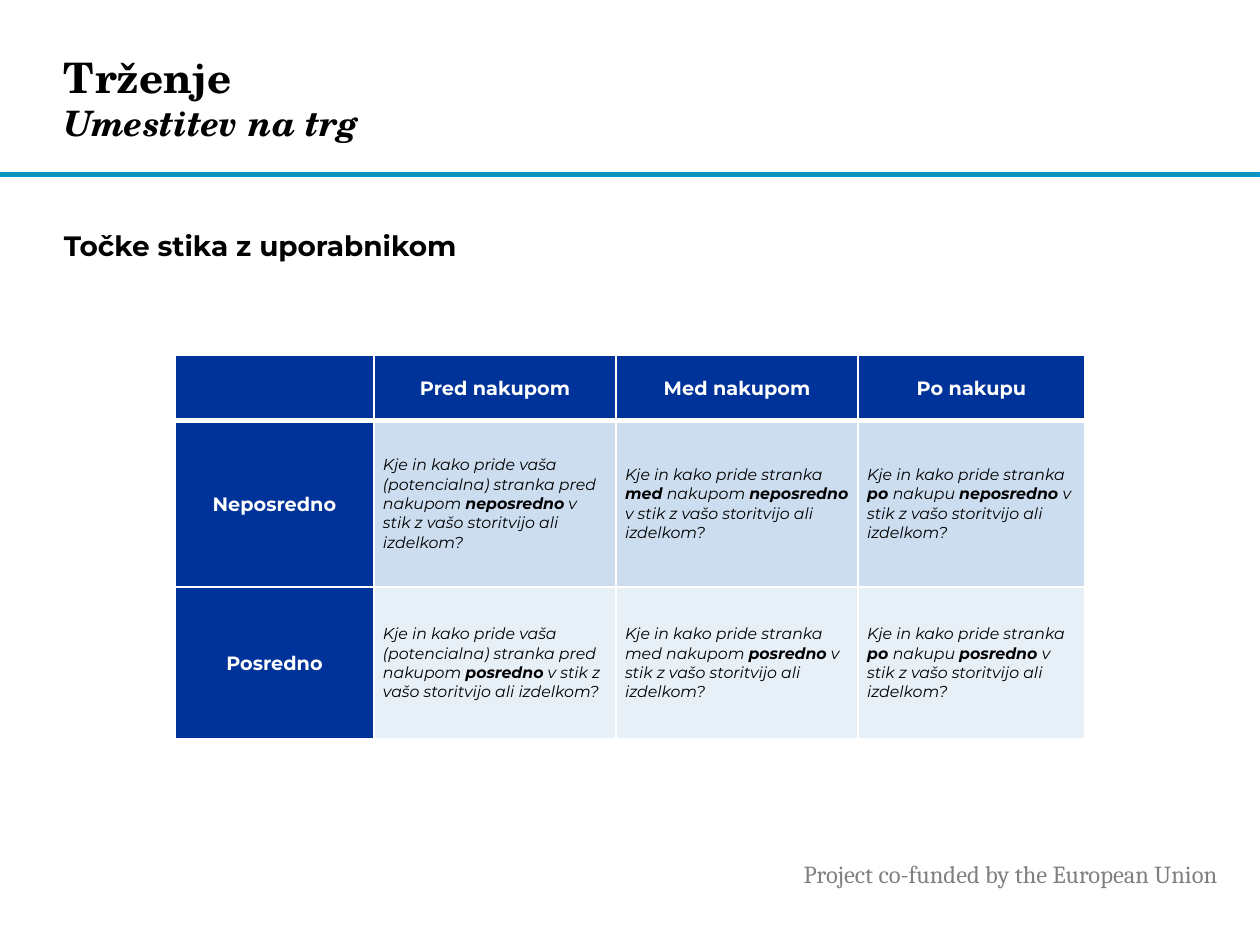
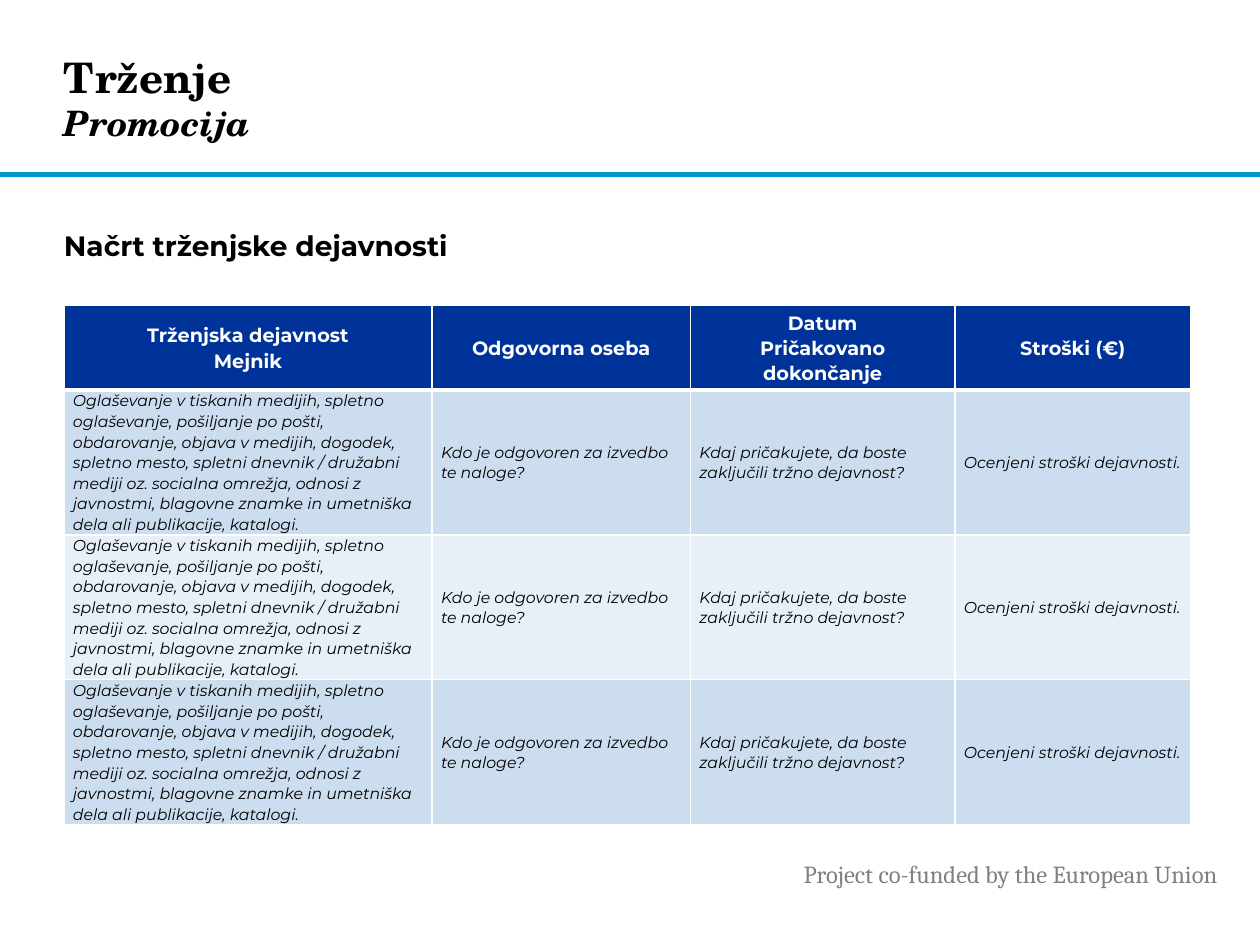
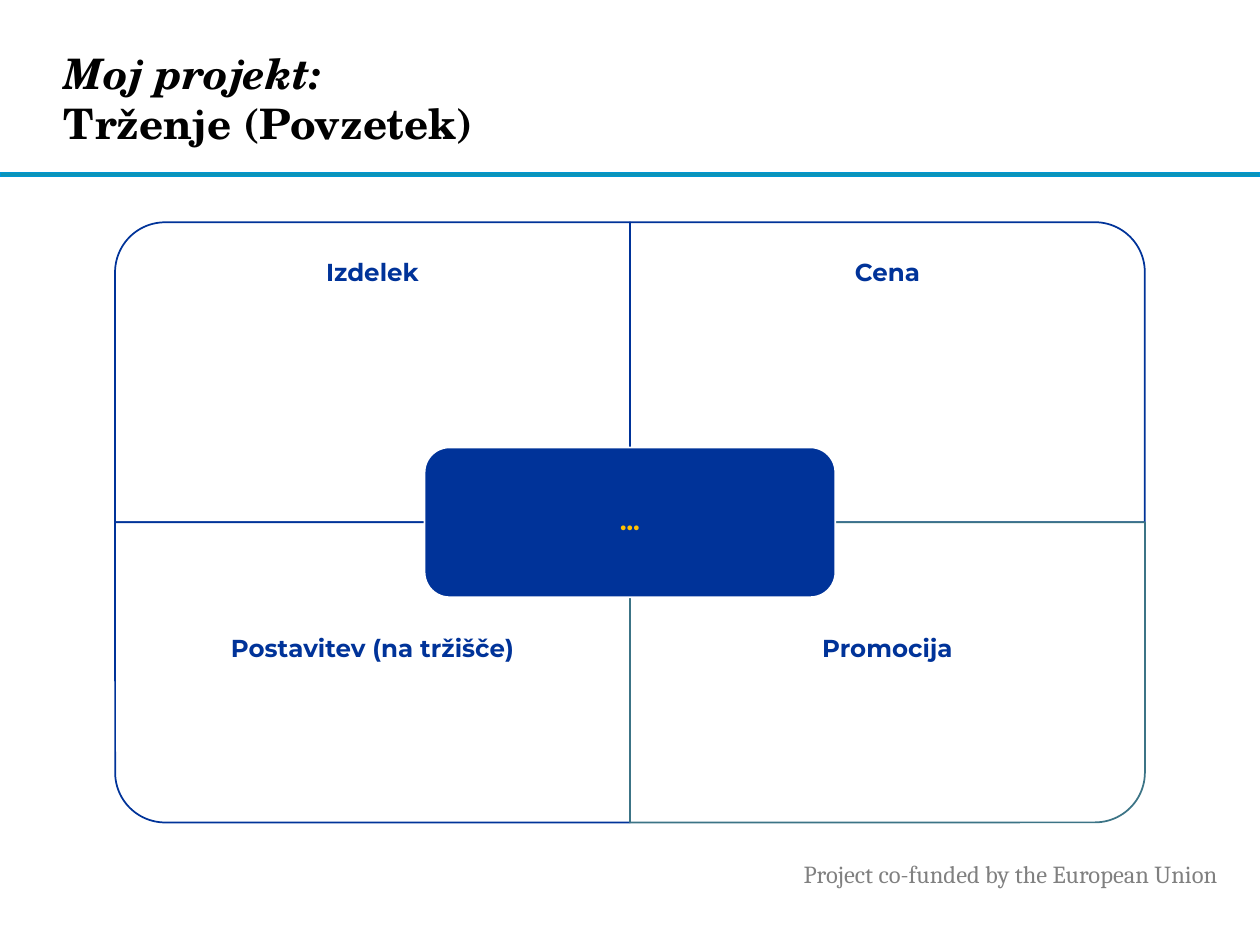
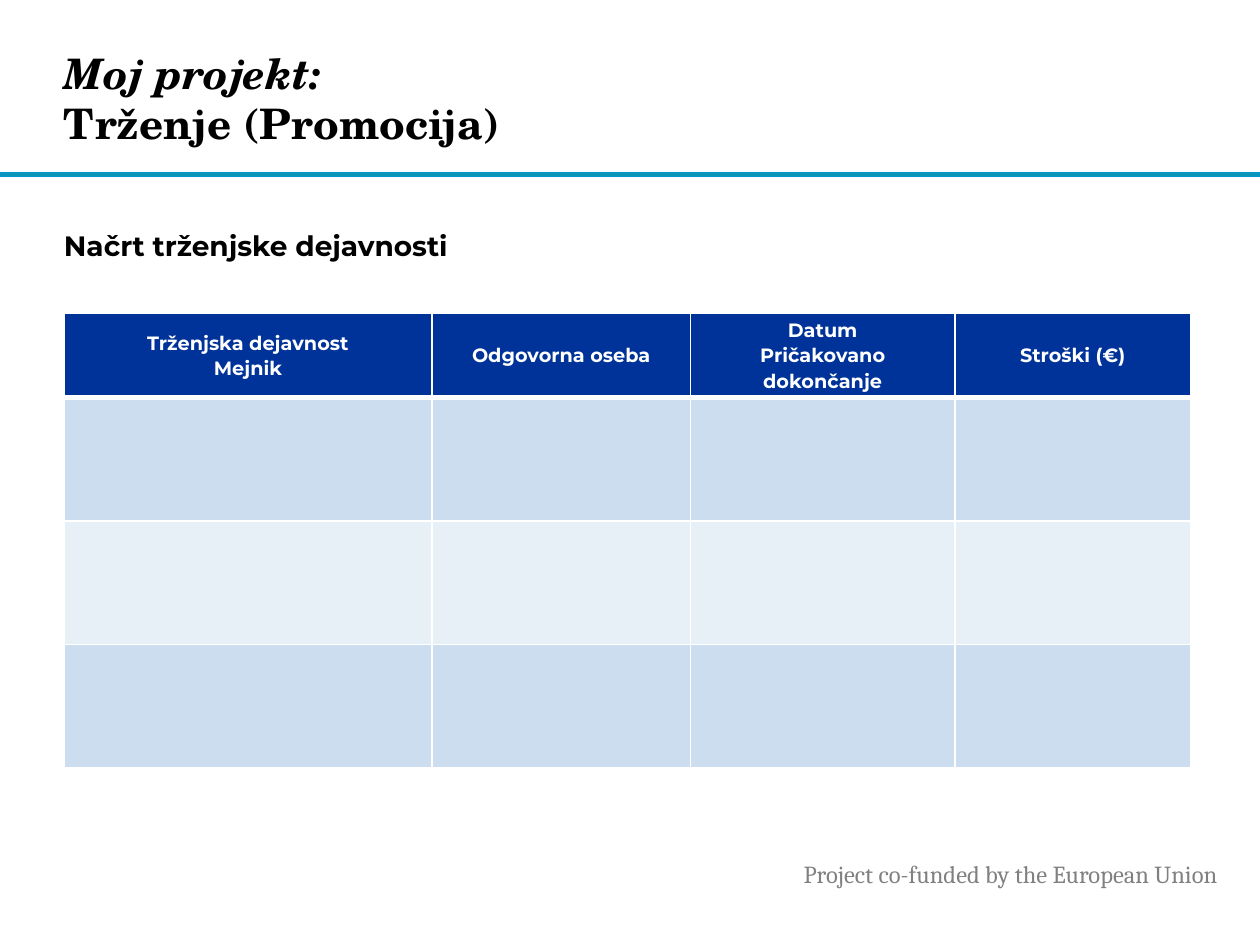
import pptx
import pptx.util
import pptx.dml.color
import pptx.enum.shapes
import pptx.enum.text
import lxml.etree

Cm, Pt = pptx.util.Cm, pptx.util.Pt
Color = pptx.dml.color.RGBColor
Shape = pptx.enum.shapes.MSO_SHAPE
MID = pptx.enum.text.MSO_ANCHOR.MIDDLE
TOP = pptx.enum.text.MSO_ANCHOR.TOP
MIDDLE = {"alignment": pptx.enum.text.PP_ALIGN.CENTER}

# Colours
BLACK = Color(0x00, 0x00, 0x00)
WHITE = Color(0xFF, 0xFF, 0xFF)
GREY = Color(0x80, 0x80, 0x80)
NAVY = Color(0x00, 0x33, 0x99)
TEAL = Color(0x3C, 0x74, 0x86)
GOLD = Color(0xFF, 0xC0, 0x00)
BAND = Color(0x0C, 0x94, 0xB7)
EDGE = Color(0x00, 0x96, 0xD3)
PALE = Color(0xCC, 0xDD, 0xEF)
LIGHT = Color(0xE7, 0xEF, 0xF7)

# Text formats and the shared left edge
LEFT = 1.29
SANS = "Montserrat"
TITLE = {"name": "TeX Gyre Schola", "bold": True, "color": BLACK}
FOOT = {"name": "Cambria", "size": Pt(14), "color": GREY}
SUB = {"name": SANS, "size": Pt(16), "bold": True, "color": BLACK}
HEAD = {"name": SANS, "size": Pt(11), "bold": True, "color": WHITE}
BODY = {"name": SANS, "size": Pt(9), "italic": True, "color": BLACK}
LABEL = {"name": SANS, "size": Pt(14), "bold": True, "color": NAVY}


def write(frame, lines, form, layout):
    """Fill a frame with paragraphs; text between asterisks is bold."""
    for n, line in enumerate(lines):
        par = frame.add_paragraph() if n else frame.paragraphs[0]
        for key, value in layout.items():
            setattr(par, key, value)
        for k, bit in enumerate(line.split("*")):
            run = par.add_run()
            run.text = bit
            for key, value in form.items():
                if key == "color":
                    run.font.color.rgb = value
                else:
                    setattr(run.font, key, value)
            if k % 2:
                run.font.bold = True


def add_box(slide, place, insets, anchor):
    """Add a wrapping text box; insets are left, top, right, bottom in cm."""
    frame = slide.shapes.add_textbox(*[Cm(v) for v in place]).text_frame
    frame.word_wrap = True
    frame.vertical_anchor = anchor
    for side, gap in zip(("left", "top", "right", "bottom"), insets):
        setattr(frame, "margin_" + side, Cm(gap))
    return frame


# Content: title lines as (text, size, italic), subtitle, table
PLAN = [["Trženjska dejavnost", "Mejnik"], ["Odgovorna oseba"],
        ["Datum", "Pričakovano dokončanje"], ["Stroški (€)"]]
TASK = [
    ["Oglaševanje v tiskanih medijih, spletno oglaševanje, pošiljanje po pošti, "
     "obdarovanje, objava v medijih, dogodek, spletno mesto, spletni dnevnik / "
     "družabni mediji oz. socialna omrežja, odnosi z javnostmi, blagovne znamke "
     "in umetniška dela ali publikacije, katalogi."],
    ["Kdo je odgovoren za izvedbo te naloge?"],
    ["Kdaj pričakujete, da boste zaključili tržno dejavnost?"],
    ["Ocenjeni stroški dejavnosti."]]
TOUCH = [
    [[], ["Pred nakupom"], ["Med nakupom"], ["Po nakupu"]],
    [["Neposredno"],
     ["Kje in kako pride vaša (potencialna) stranka pred nakupom *neposredno* v "
      "stik z vašo storitvijo ali izdelkom?"],
     ["Kje in kako pride stranka *med *nakupom *neposredno* v stik z vašo "
      "storitvijo ali izdelkom?"],
     ["Kje in kako pride stranka *po *nakupu *neposredno *v stik z vašo "
      "storitvijo ali izdelkom?"]],
    [["Posredno"],
     ["Kje in kako pride vaša (potencialna) stranka pred nakupom *posredno* v "
      "stik z vašo storitvijo ali izdelkom?"],
     ["Kje in kako pride stranka med nakupom *posredno* v stik z vašo "
      "storitvijo ali izdelkom?"],
     ["Kje in kako pride stranka *po *nakupu *posredno *v stik z vašo "
      "storitvijo ali izdelkom?"]]]
WIDE = [7.42, 5.21, 5.33, 4.75]
GAPS = {"line_spacing": 1.07, "space_after": Pt(8)}

touch = {"at": (3.53, 7.16), "cols": [4.01, 4.88, 4.88, 4.57],
         "rows": [1.32, 3.35, 3.07], "cells": TOUCH, "side": True,
         "layout": {"space_after": Pt(3)}}
plan = {"at": (LEFT, 6.16), "cols": WIDE, "rows": [1.7] + [2.92] * 3,
        "cells": [PLAN] + [TASK] * 3, "side": False, "layout": GAPS}
blank = {"at": (LEFT, 6.31), "cols": WIDE, "rows": [1.7] + [2.49] * 3,
         "cells": [PLAN] + [[[]] * 4] * 3, "side": False, "layout": GAPS}

MINE = ("Moj projekt:", 24, True)
MARKET = ("Trženje", 24, False)
PAGES = [
    ([MARKET, ("Umestitev na trg", 20, True)], "Točke stika z uporabnikom", touch),
    ([MARKET, ("Promocija", 20, True)], "Načrt trženjske dejavnosti", plan),
    ([MINE, ("Trženje (Povzetek)", 24, False)], None, None),
    ([MINE, ("Trženje (Promocija)", 24, False)], "Načrt trženjske dejavnosti", blank),
]

deck = pptx.Presentation()
deck.slide_width, deck.slide_height = Cm(25.4), Cm(19.05)

for title, sub, grid in PAGES:
    slide = deck.slides.add_slide(deck.slide_layouts[6])

    # Band and footer
    band = slide.shapes.add_shape(Shape.RECTANGLE, 0, Cm(3.48), Cm(25.4), Cm(0.08))
    band.shadow.inherit = False
    band.fill.solid()
    band.fill.fore_color.rgb = BAND
    band.line.color.rgb = EDGE
    band.line.width = Pt(1)
    foot = add_box(slide, (15.95, 17.19, 9.3, 0.86), (0.25, 0.13, 0.25, 0.13), TOP)
    write(foot, ["Project co-funded by the European Union"], FOOT, {})

    # Title: two lines of one paragraph
    frame = add_box(slide, (LEFT, 0.46, 18.47, 3.02), (0, 0, 0, 0), MID)
    par = frame.paragraphs[0]
    for n, (text, size, slant) in enumerate(title):
        if n:
            par.add_line_break()
        run = par.add_run()
        run.text = text
        run.font.name, run.font.bold = TITLE["name"], TITLE["bold"]
        run.font.color.rgb = TITLE["color"]
        run.font.size, run.font.italic = Pt(size), slant

    # Subtitle
    if sub:
        frame = add_box(slide, (LEFT, 4.47, 21.56, 1.2), (0, 0.13, 0, 0.13), TOP)
        write(frame, [sub], SUB, {"space_after": Pt(6)})

    # Table
    if grid:
        cols, rows = grid["cols"], grid["rows"]
        place = [Cm(v) for v in (*grid["at"], sum(cols), sum(rows))]
        table = slide.shapes.add_table(len(rows), len(cols), *place).table
        table.horz_banding = False
        for n, width in enumerate(cols):
            table.columns[n].width = Cm(width)
        for r, height in enumerate(rows):
            table.rows[r].height = Cm(height)
            for c, lines in enumerate(grid["cells"][r]):
                cell = table.cell(r, c)
                head = r == 0 or (grid["side"] and c == 0)
                props = cell._tc.get_or_add_tcPr()
                for side in "LRTB":
                    thick = (side == "B" and r == 0) or (side == "T" and r == 1)
                    props.append(lxml.etree.fromstring(
                        '<a:ln%s xmlns:a="http://schemas.openxmlformats.org/'
                        'drawingml/2006/main" w="%d"><a:solidFill><a:srgbClr '
                        'val="%s"/></a:solidFill></a:ln%s>'
                        % (side, Pt(3 if thick else 1), WHITE, side)))
                cell.fill.solid()
                cell.fill.fore_color.rgb = NAVY if head else PALE if r % 2 else LIGHT
                cell.vertical_anchor = MID
                cell.margin_left = cell.margin_right = Cm(0.18)
                cell.margin_top = cell.margin_bottom = 0
                if head:
                    write(cell.text_frame, lines, HEAD, {**MIDDLE, "line_spacing": 1.07})
                else:
                    write(cell.text_frame, lines, BODY, grid["layout"])
        continue

    # Four quarters, each with its round corner turned outwards
    wide, high = 10.38, 6.05
    tight = {**MIDDLE, "line_spacing": 0.9}
    parts = [("Izdelek", 270, NAVY), ("Cena", 0, NAVY),
             ("Postavitev (na tržišče)", 180, NAVY), ("Promocija", 90, TEAL)]
    for n, (name, turn, color) in enumerate(parts):
        left, top = 2.32 + n % 2 * wide, 4.48 + n // 2 * high
        w, h = (high, wide) if turn % 180 else (wide, high)
        place = (left + (wide - w) / 2, top + (high - h) / 2, w, h)
        part = slide.shapes.add_shape(Shape.ROUND_1_RECTANGLE, *[Cm(v) for v in place])
        part.rotation = turn
        part.shadow.inherit = False
        part.fill.solid()
        part.fill.fore_color.rgb = WHITE
        part.line.color.rgb = color
        part.line.width = Pt(1)
        shift = n // 2 * 1.52
        frame = add_box(slide, (left, top + shift, wide, 4.53),
                        (0.28, 1.3, 0.28, 0.28), TOP)
        write(frame, [name], LABEL, tight)

    # Centre
    core = slide.shapes.add_shape(Shape.ROUNDED_RECTANGLE,
                                  Cm(8.56), Cm(9.02), Cm(8.28), Cm(3.02))
    core.shadow.inherit = False
    core.fill.solid()
    core.fill.fore_color.rgb = NAVY
    core.line.color.rgb = WHITE
    core.line.width = Pt(1)
    core.text_frame.vertical_anchor = MID
    write(core.text_frame, ["…"], {**LABEL, "color": GOLD}, tight)

deck.save("out.pptx")
